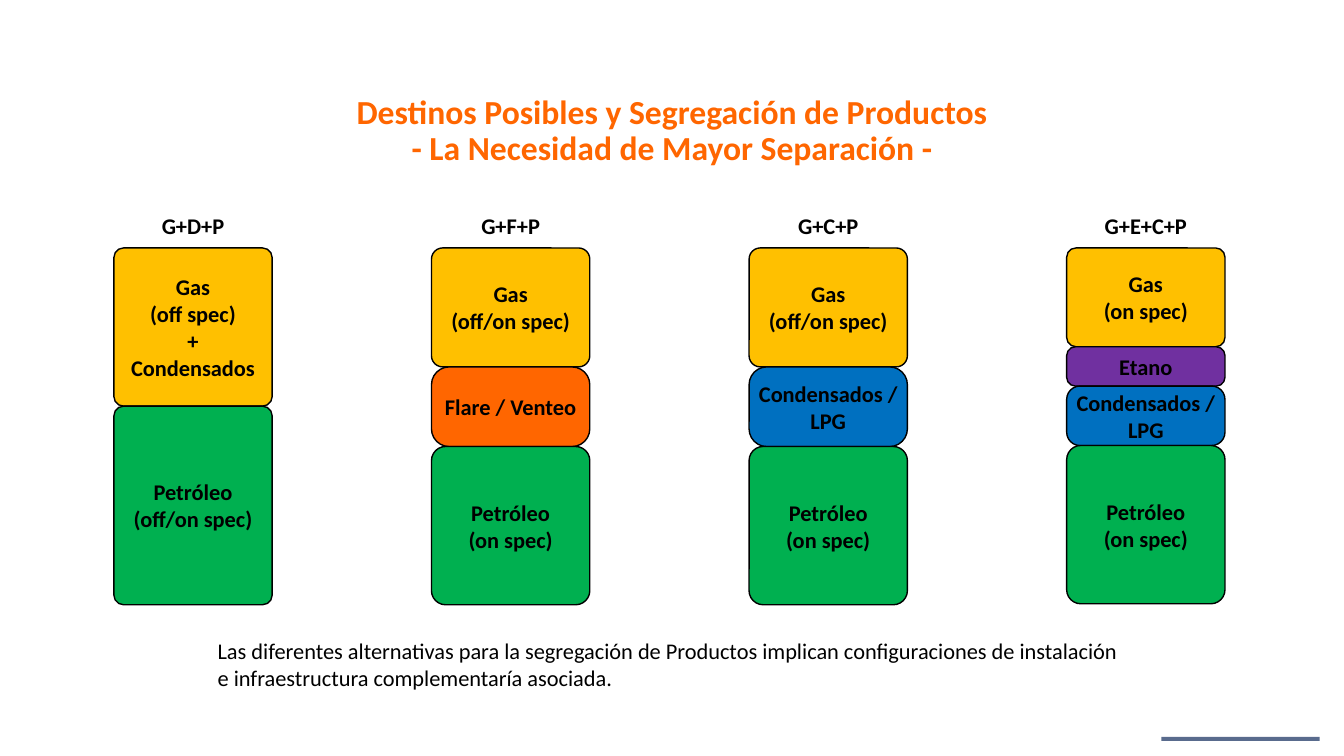
import pptx
import pptx.util
import pptx.dml.color
import pptx.enum.shapes
import pptx.enum.text
import pptx.oxml.ns
from lxml import etree

Inches, Pt = pptx.util.Inches, pptx.util.Pt
RGB = pptx.dml.color.RGBColor.from_string
SHAPE = pptx.enum.shapes.MSO_SHAPE
ALIGN = pptx.enum.text.PP_ALIGN
ANCHOR = pptx.enum.text.MSO_ANCHOR

THEME = {
    "font": "Calibri", "title_size": 24, "body_size": 16,
    "title": "FF6600", "text": "000000", "line": "000000", "bar": "001C50",
    "gas": "FFC000", "oil": "00B050", "flare": "FF6600",
    "condensate": "0070C0", "ethane": "7030A0",
}


def add_run(p, text, size="body_size", color="text", bold=True):
    r = p.add_run()
    r.text = text
    r.font.name = THEME["font"]
    r.font.size = Pt(THEME[size])
    r.font.bold = bold
    r.font.color.rgb = RGB(THEME[color])


def set_frame(sp, anchor, inset_x, inset_y):
    tf = sp.text_frame
    tf.word_wrap = True
    tf.vertical_anchor = anchor
    tf.margin_left = tf.margin_right = Inches(inset_x)
    tf.margin_top = tf.margin_bottom = Inches(inset_y)
    return tf


prs = pptx.Presentation()
prs.slide_width, prs.slide_height = Inches(13.33), Inches(7.5)
s = prs.slides.add_slide(prs.slide_layouts[6])

bar = s.shapes.add_shape(SHAPE.RECTANGLE, Inches(11.52), Inches(7.31), Inches(1.57), Inches(0.04))
bar.shadow.inherit = False
bar.line.fill.background()
bar.fill.solid()
bar.fill.fore_color.rgb = RGB(THEME["bar"])
color = bar.fill._xPr.find(".//" + pptx.oxml.ns.qn("a:srgbClr"))
etree.SubElement(color, pptx.oxml.ns.qn("a:alpha"), val="65000")

title = s.shapes.add_textbox(Inches(0.76), Inches(0.91), Inches(11.81), Inches(0.79))
p = set_frame(title, ANCHOR.MIDDLE, 0.08, 0.04).paragraphs[0]
p.alignment = ALIGN.CENTER
p.line_spacing = 0.9
add_run(p, "Destinos Posibles y Segregación de Productos", "title_size", "title")
p.add_line_break()
add_run(p, "- La Necesidad de Mayor Separación -", "title_size", "title")

oil_on_spec = ("oil", 1.57, 0.089, ["Petróleo", "(on spec)"])
gas_off_on = ("gas", 1.18, 0.094, ["Gas", "(off/on spec)"])
stacks = [
    ("G+D+P", [
        ("gas", 1.57, 0.061, ["Gas", "(off spec)", "+", "Condensados"]),
        ("oil", 1.97, 0.061, ["Petróleo", "(off/on spec)"]),
    ]),
    ("G+F+P", [gas_off_on, ("flare", 0.79, 0.223, ["Flare / Venteo"]), oil_on_spec]),
    ("G+C+P", [gas_off_on, ("condensate", 0.79, 0.223, ["Condensados / LPG"]), oil_on_spec]),
    ("G+E+C+P", [
        ("gas", 0.98, 0.094, ["Gas", "(on spec)"]),
        ("ethane", 0.39, 0.223, ["Etano"]),
        ("condensate", 0.59, 0.223, ["Condensados / LPG"]),
        oil_on_spec,
    ]),
]
width = 1.57
for i, (name, blocks) in enumerate(stacks):
    left = 1.13 + 3.15 * i
    label = s.shapes.add_textbox(Inches(left), Inches(2.06), Inches(width), Inches(0.39))
    p = set_frame(label, ANCHOR.TOP, 0.04, 0.04).paragraphs[0]
    p.alignment = ALIGN.CENTER
    add_run(p, name)

    top = 2.46
    for product, height, radius, lines in blocks:
        sp = s.shapes.add_shape(SHAPE.ROUNDED_RECTANGLE, Inches(left), Inches(top), Inches(width), Inches(height))
        sp.adjustments[0] = radius
        sp.shadow.inherit = False
        sp.fill.solid()
        sp.fill.fore_color.rgb = RGB(THEME[product])
        sp.line.color.rgb = RGB(THEME["line"])
        sp.line.width = Pt(1)
        tf = set_frame(sp, ANCHOR.MIDDLE, 0.04, 0.04)
        for n, text in enumerate(lines):
            p = tf.add_paragraph() if n else tf.paragraphs[0]
            p.alignment = ALIGN.CENTER
            add_run(p, text)
        top += height

note = s.shapes.add_textbox(Inches(2.06), Inches(6.27), Inches(9.22), Inches(0.64))
tf = set_frame(note, ANCHOR.TOP, 0.1, 0.05)
tf.auto_size = pptx.enum.text.MSO_AUTO_SIZE.SHAPE_TO_FIT_TEXT
add_run(tf.paragraphs[0], "Las diferentes alternativas para la segregación de Productos implican "
        "configuraciones de instalación e infraestructura complementaría asociada.", bold=False)

prs.save("out.pptx")
